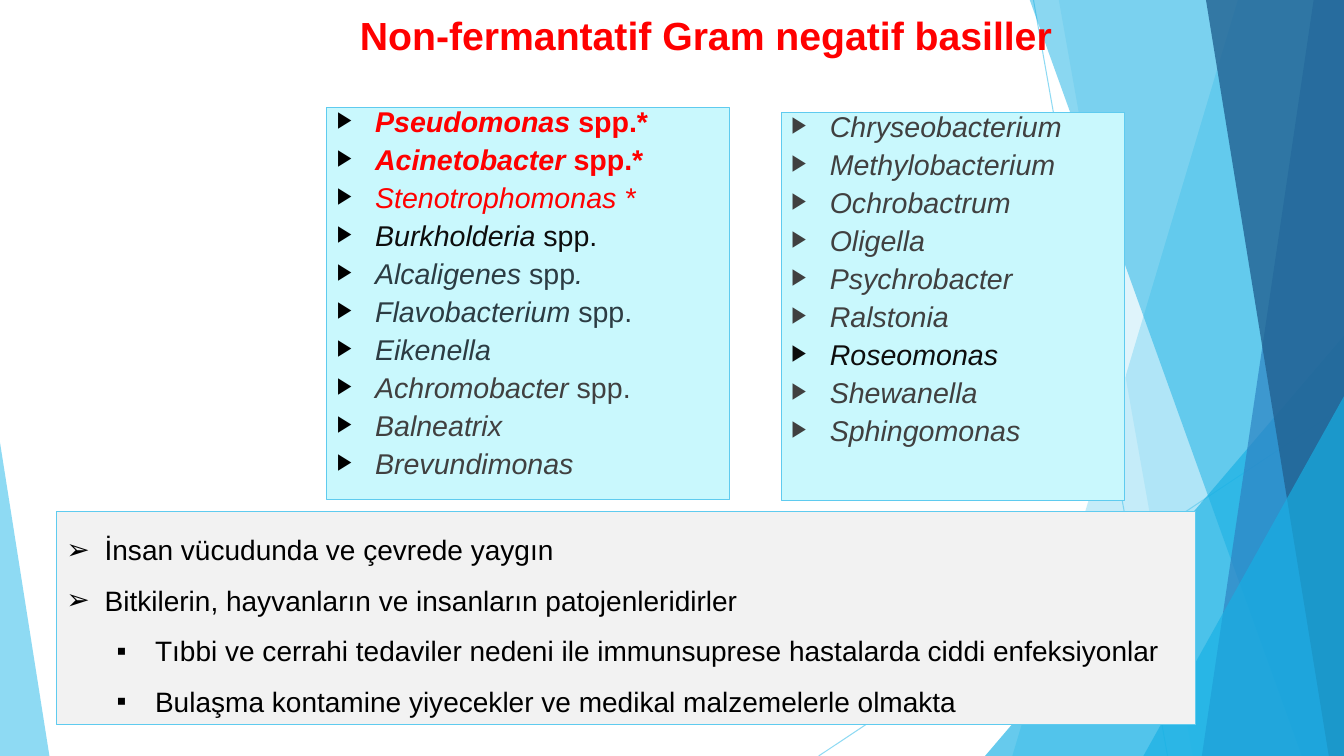
"""Build a slide listing the non-fermenting Gram negative bacilli."""
from dataclasses import dataclass

from lxml import etree
from pptx import Presentation
from pptx import util as u
from pptx.dml.color import RGBColor
from pptx.enum import shapes, text
from pptx.oxml.ns import qn

EMU_PER_PX = 9144
PAGE_WIDTH, PAGE_HEIGHT = 1333, 750


@dataclass(frozen=True)
class Theme:
    font: str = "Arial"
    red: str = "FF0000"
    black: str = "000000"
    ink: str = "0D0D0D"
    slate: str = "2C3C43"
    grey: str = "404040"
    sky: str = "5FCBEF"
    cyan: str = "17B0E4"
    blue: str = "2E83C3"
    navy: str = "226292"
    list_fill: str = "C9F8FD"
    note_fill: str = "F2F2F2"
    title_size: float = 28
    list_size: float = 20.4
    note_size: float = 20
    outline: float = 0.75


THEME = Theme()


@dataclass(frozen=True)
class Area:
    left: int
    top: int
    width: int
    height: int


@dataclass(frozen=True)
class Ray:
    start: tuple[int, int]
    end: tuple[int, int]


@dataclass(frozen=True)
class Facet:
    top_x: int
    bottom_x: int
    colour: str
    opacity: int


@dataclass(frozen=True)
class Wedge:
    area: Area
    apex: int
    colour: str
    opacity: int


@dataclass(frozen=True)
class Genus:
    name: str
    suffix: str = ""
    colour: str = THEME.grey
    bold: bool = False
    ending: str = ""


@dataclass(frozen=True)
class Note:
    wording: str
    level: int = 0


RAYS = (Ray((1025, 0), (1158, 750)), Ray((1333, 403), (812, 750)))
DECOR = (
    Facet(1228, 1004, THEME.sky, 36),
    Facet(1050, 1183, THEME.sky, 20),
    Wedge(Area(977, 333, 356, 417), 1, THEME.cyan, 66),
    Facet(1021, 1291, THEME.cyan, 50),
    Facet(1303, 1192, THEME.blue, 70),
    Facet(1196, 1318, THEME.navy, 80),
    Wedge(Area(1134, 393, 199, 357), 1, THEME.cyan, 66),
    Wedge(Area(0, 439, 49, 311), 0, THEME.sky, 70),
)
LEFT_GENERA = (
    Genus("Pseudomonas ", "spp.*", THEME.red, True),
    Genus("Acinetobacter ", "spp.*", THEME.red, True),
    Genus("Stenotrophomonas *", colour=THEME.red),
    Genus("Burkholderia ", "spp.", THEME.ink),
    Genus("Alcaligenes ", "spp", THEME.slate, ending="."),
    Genus("Flavobacterium ", "spp.", THEME.slate),
    Genus("Eikenella", colour=THEME.slate),
    Genus("Achromobacter ", "spp."),
    Genus("Balneatrix"),
    Genus("Brevundimonas"),
)
RIGHT_GENERA = (
    Genus("Chryseobacterium"),
    Genus("Methylobacterium"),
    Genus("Ochrobactrum"),
    Genus("Oligella"),
    Genus("Psychrobacter"),
    Genus("Ralstonia"),
    Genus("Roseomonas", colour=THEME.ink),
    Genus("Shewanella"),
    Genus("Sphingomonas"),
)
NOTES = (
    Note("İnsan vücudunda ve çevrede yaygın"),
    Note("Bitkilerin, hayvanların ve insanların patojenleridirler"),
    Note("Tıbbi ve cerrahi tedaviler nedeni ile immunsuprese hastalarda ciddi enfeksiyonlar", 1),
    Note("Bulaşma kontamine yiyecekler ve medikal malzemelerle olmakta", 1),
)


def px(length: int) -> int:
    return u.Emu(length * EMU_PER_PX)


def place(box, area: Area) -> None:
    box.left, box.top = px(area.left), px(area.top)
    box.width, box.height = px(area.width), px(area.height)


def paint(fill, colour: str, opacity: int = 100) -> None:
    fill.solid()
    fill.fore_color.rgb = RGBColor.from_string(colour)
    if opacity < 100:
        for node in fill._xPr.iter(qn("a:srgbClr")):
            etree.SubElement(node, qn("a:alpha"), val=str(opacity * 1000))


def outline(line, opacity: int = 100) -> None:
    line.width = u.Pt(THEME.outline)
    paint(line.fill, THEME.sky, opacity)


def draw_ray(page, ray: Ray) -> None:
    line = page.shapes.add_connector(
        shapes.MSO_CONNECTOR.STRAIGHT, *map(px, ray.start + ray.end))
    outline(line.line, 70)
    etree.SubElement(line._element.spPr, qn("a:effectLst"))


def draw_decor(page, part: Facet | Wedge) -> None:
    if isinstance(part, Facet):
        builder = page.shapes.build_freeform(part.top_x, -1, scale=EMU_PER_PX)
        builder.add_line_segments(
            [(PAGE_WIDTH, -1), (PAGE_WIDTH, PAGE_HEIGHT), (part.bottom_x, PAGE_HEIGHT)])
        shape = builder.convert_to_shape()
    else:
        shape = page.shapes.add_shape(shapes.MSO_SHAPE.ISOSCELES_TRIANGLE, 0, 0, 0, 0)
        place(shape, part.area)
        shape.adjustments[0] = part.apex
    paint(shape.fill, part.colour, part.opacity)
    shape.line.fill.background()
    shape.shadow.inherit = False


def add_span(para, wording: str, *, size: float, colour: str,
             bold: bool = False, italic: bool = False) -> None:
    span = para.add_run()
    span.text = wording
    span.font.name, span.font.size = THEME.font, u.Pt(size)
    span.font.bold, span.font.italic = bold, italic
    span.font.color.rgb = RGBColor.from_string(colour)


def add_para(frame, index: int, *, bullet: str, spacing: float, before: float = 0,
             margin: int = 38, bullet_colour: str = "", bullet_scale: int = 100):
    para = frame.paragraphs[0] if index == 0 else frame.add_paragraph()
    props = para._p.get_or_add_pPr()
    props.set("marL", str(px(margin)))
    props.set("indent", str(px(-38)))
    if bullet_colour:
        holder = etree.SubElement(props, qn("a:buClr"))
        etree.SubElement(holder, qn("a:srgbClr"), val=bullet_colour)
    etree.SubElement(props, qn("a:buSzPct"), val=str(bullet_scale * 1000))
    etree.SubElement(props, qn("a:buFont"), typeface=THEME.font)
    etree.SubElement(props, qn("a:buChar"), char=bullet)
    para.line_spacing = spacing
    para.space_before = u.Pt(before if index else 0)
    return para


def fill_genera(box, area: Area, genera: tuple[Genus, ...], bullet_colour: str = "") -> None:
    place(box, area)
    paint(box.fill, THEME.list_fill)
    outline(box.line)
    box.text_frame.auto_size = text.MSO_AUTO_SIZE.NONE
    for index, genus in enumerate(genera):
        para = add_para(box.text_frame, index, bullet="▶", spacing=0.7, before=10,
                        bullet_colour=bullet_colour, bullet_scale=80)
        for wording, italic in ((genus.name, True), (genus.suffix, False), (genus.ending, True)):
            if wording:
                add_span(para, wording, size=THEME.list_size, colour=genus.colour,
                         bold=genus.bold, italic=italic)


def draw_notes(page, area: Area) -> None:
    box = page.shapes.add_textbox(0, 0, 0, 0)
    place(box, area)
    paint(box.fill, THEME.note_fill)
    outline(box.line)
    box.text_frame.word_wrap = True
    box.text_frame.auto_size = text.MSO_AUTO_SIZE.SHAPE_TO_FIT_TEXT
    for index, note in enumerate(NOTES):
        para = add_para(box.text_frame, index, bullet="▪" if note.level else "➢",
                        spacing=1.5, margin=38 + 50 * note.level)
        para.level = note.level
        add_span(para, note.wording, size=THEME.note_size, colour=THEME.black)


def main() -> None:
    deck = Presentation()
    deck.slide_width, deck.slide_height = px(PAGE_WIDTH), px(PAGE_HEIGHT)
    page = deck.slides.add_slide(deck.slide_layouts[3])
    title, left_list, right_list = page.placeholders
    for ray in RAYS:
        draw_ray(page, ray)
    for part in DECOR:
        draw_decor(page, part)
    for holder in (title, left_list, right_list):
        page.shapes._spTree.append(holder._element)
    place(title, Area(347, 6, 737, 101))
    title.text_frame.vertical_anchor = text.MSO_ANCHOR.TOP
    heading = title.text_frame.paragraphs[0]
    heading.alignment = text.PP_ALIGN.LEFT
    add_span(heading, "Non-fermantatif Gram negatif basiller",
             size=THEME.title_size, colour=THEME.red, bold=True)
    fill_genera(left_list, Area(324, 107, 400, 389), LEFT_GENERA, THEME.black)
    fill_genera(right_list, Area(775, 112, 340, 385), RIGHT_GENERA)
    draw_notes(page, Area(56, 507, 1130, 212))
    deck.save("out.pptx")


if __name__ == "__main__":
    main()
